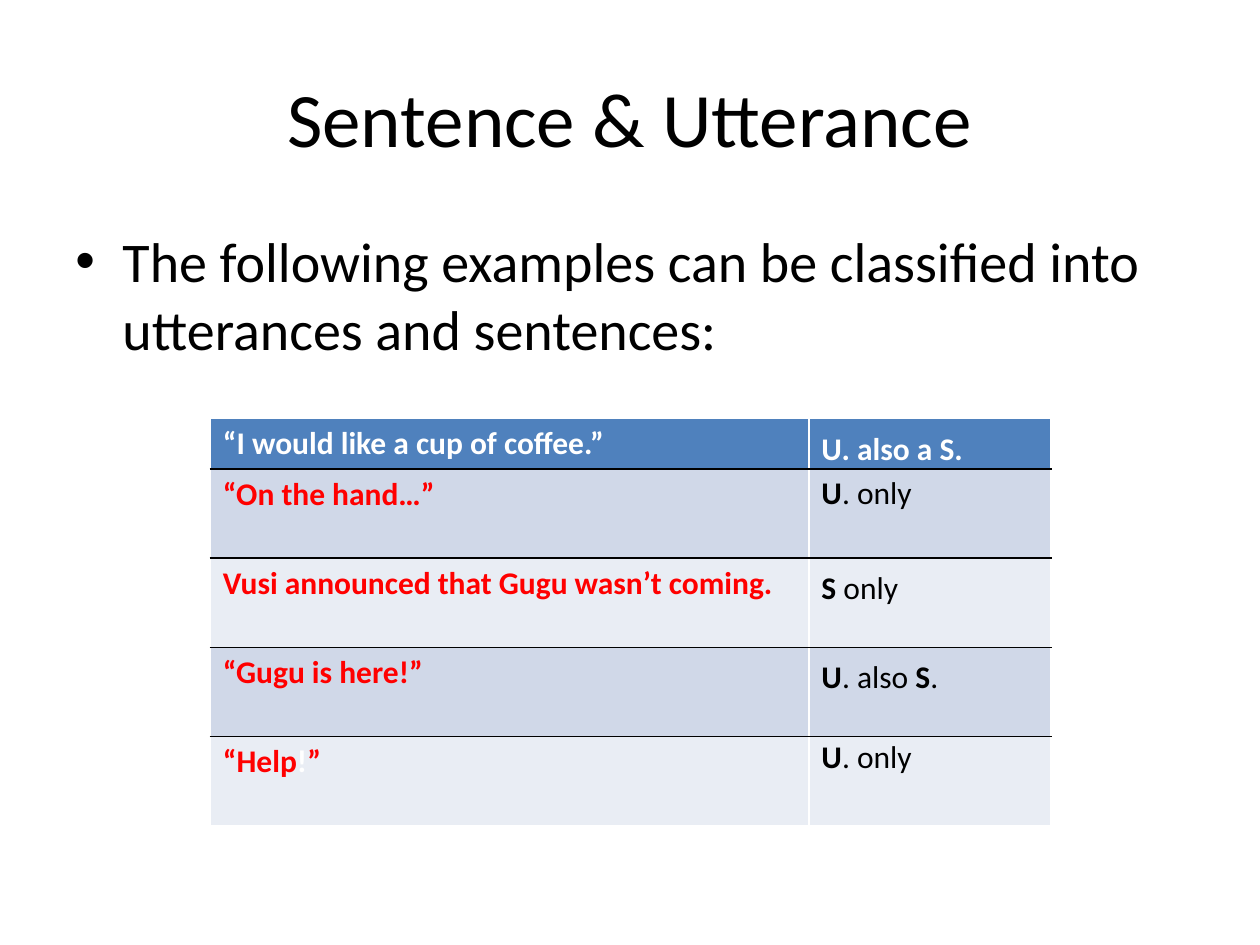
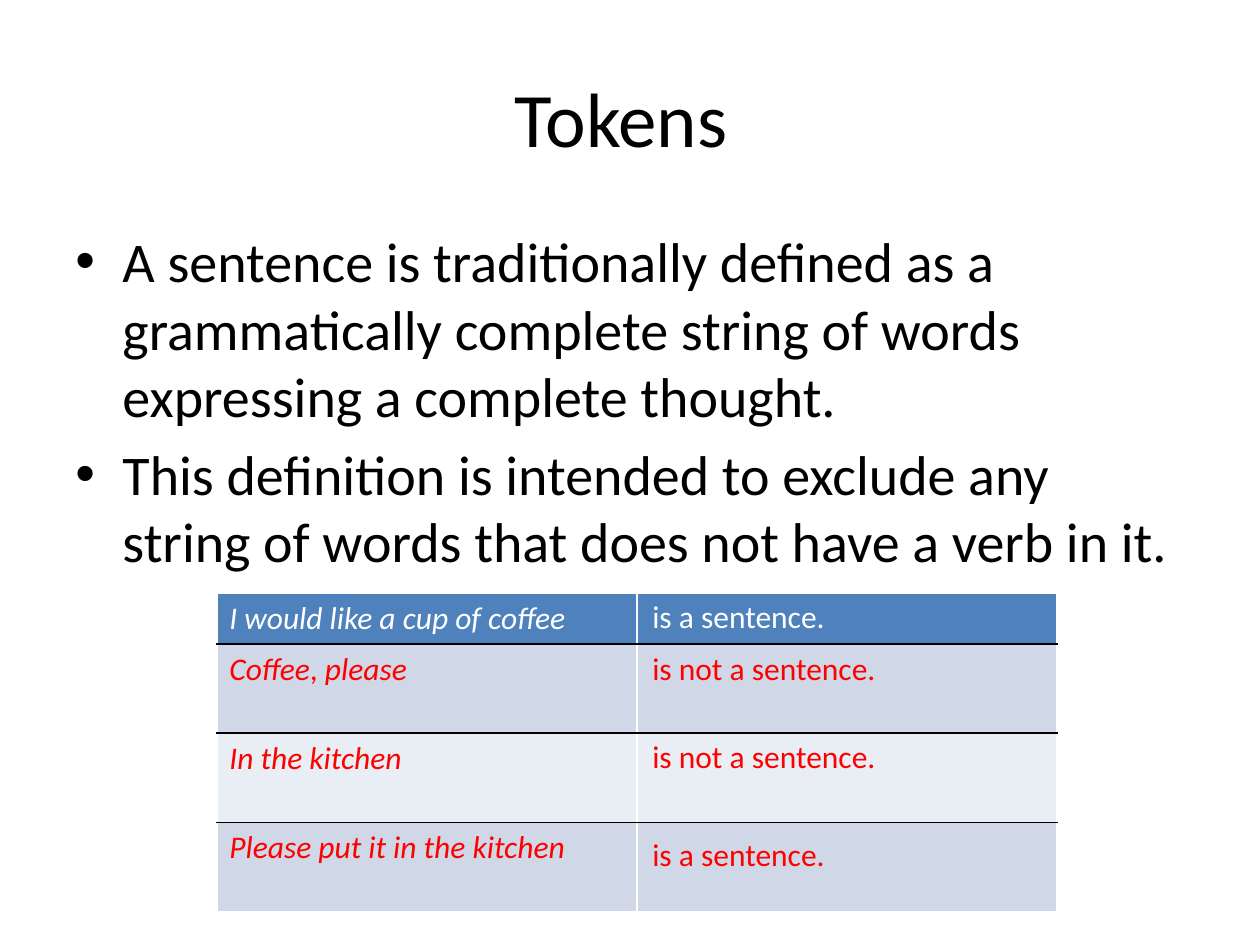
from lxml.etree import SubElement
from pptx import Presentation
from pptx.dml.color import RGBColor
from pptx.enum.text import MSO_ANCHOR as Anchor, MSO_AUTO_SIZE as AutoSize, PP_ALIGN as Align
from pptx.oxml.ns import qn
from pptx.util import Cm, Pt

FONT = "Calibri"
BLACK, WHITE, RED = "000000", "FFFFFF", "FF0000"
HEADER_FILL = "4F81BD"
BAND_FILLS = ("D0D8E8", "E9EDF4")
HEADER_HEIGHT, ROW_HEIGHT = 1.02, 1.8
ANSWER_HEIGHT = 1.02


def rgb(value):
    return RGBColor.from_string(value)


def write(para, text, size=18, color=BLACK, bold=False, italic=False):
    """Add text to a paragraph: a string, or a list of strings and (string, changes) pairs."""
    base = dict(size=size, color=color, bold=bold, italic=italic)
    for part in [text] if isinstance(text, str) else text:
        words, changes = (part, {}) if isinstance(part, str) else part
        look = base | changes
        span = para.add_run()
        span.text = words
        span.font.name = FONT
        span.font.size = Pt(look["size"])
        span.font.bold = look["bold"]
        span.font.italic = look["italic"]
        span.font.color.rgb = rgb(look["color"])


def add_frame(page, left, top, width, height):
    box = page.shapes.add_textbox(Cm(left), Cm(top), Cm(width), Cm(height))
    box.text_frame.word_wrap = True
    return box.text_frame


def add_title(page, text):
    frame = add_frame(page, 1.27, 0.76, 22.86, 3.18)
    frame.vertical_anchor = Anchor.MIDDLE
    para = frame.paragraphs[0]
    para.alignment = Align.CENTER
    write(para, text, size=44)


def add_bullets(page, points):
    frame = add_frame(page, 1.27, 4.45, 22.86, 12.57)
    for index, point in enumerate(points):
        para = frame.add_paragraph() if index else frame.paragraphs[0]
        para.space_before = Pt(6.4)
        props = para._p.get_or_add_pPr()
        props.set("marL", str(Cm(0.95)))
        props.set("indent", str(Cm(-0.95)))
        SubElement(props, qn("a:buFont"), typeface="Arial")
        SubElement(props, qn("a:buChar"), char="•")
        write(para, point, size=32)


def set_borders(cell, top, bottom):
    """Draw white sides and the given top and bottom lines, each 1 pt."""
    props = cell._tc.get_or_add_tcPr()
    for side, color in (("L", WHITE), ("R", WHITE), ("T", top), ("B", bottom)):
        line = SubElement(props, qn(f"a:ln{side}"), w=str(Pt(1)))
        fill = SubElement(line, qn("a:solidFill"))
        SubElement(fill, qn("a:srgbClr"), val=color)


def add_examples(page, left, top, widths, examples, **look):
    """Add a banded table with the examples in its first column."""
    count = len(examples)
    height = HEADER_HEIGHT + ROW_HEIGHT * (count - 1)
    table = page.shapes.add_table(
        count, len(widths), Cm(left), Cm(top), Cm(sum(widths)), Cm(height)).table
    table.horz_banding = False
    for column, width in zip(table.columns, widths):
        column.width = Cm(width)
    for index, (row, example) in enumerate(zip(table.rows, examples)):
        row.height = Cm(ROW_HEIGHT if index else HEADER_HEIGHT)
        for cell in row.cells:
            set_borders(cell, BLACK if index else WHITE,
                        BLACK if index < count - 1 else WHITE)
            cell.fill.solid()
            cell.fill.fore_color.rgb = rgb(BAND_FILLS[(index - 1) % 2] if index else HEADER_FILL)
        write(row.cells[0].text_frame.paragraphs[0], example,
              color=RED if index else WHITE, **look)


def add_answers(page, left, width, answers, color):
    """Place the (top, text) answers over the second column, the first in white."""
    for index, (top, text) in enumerate(answers):
        frame = add_frame(page, left, top, width, ANSWER_HEIGHT)
        frame.auto_size = AutoSize.SHAPE_TO_FIT_TEXT
        write(frame.paragraphs[0], text, color=color if index else WHITE)


def add_page(deck, title, points):
    page = deck.slides.add_slide(deck.slide_layouts[6])
    add_title(page, title)
    add_bullets(page, points)
    return page


def add_utterance_page(deck):
    page = add_page(deck, "Sentence & Utterance", [
        "The following examples can be classified into utterances and sentences:"])
    add_examples(page, 4.24, 8.43, (12.07, 4.88), [
        "“I would like a cup of coffee.”",
        "“On the hand…”",
        "Vusi announced that Gugu wasn’t coming.",
        "“Gugu is here!”",
        ["“Help", ("!", {"color": WHITE}), "”"],
    ], bold=True)
    strong = {"bold": True}
    utterance_only = [("U", strong), ". only"]
    add_answers(page, 16.31, 4.8, [
        (8.53, [("U. also a S.", strong)]),
        (9.42, utterance_only),
        (11.33, [("S ", strong), "only"]),
        (13.13, [("U", strong), ". also ", ("S", strong), "."]),
        (14.73, utterance_only),
    ], BLACK)


def add_token_page(deck):
    page = add_page(deck, "Tokens ", [
        "A sentence is traditionally defined as a grammatically complete string of words "
        "expressing a complete thought.",
        "This definition is intended to exclude any string of words that does not have "
        "a verb in it."])
    add_examples(page, 4.37, 11.96, (8.47, 8.47), [
        "I would like a cup of coffee",
        ["Coffee", (", ", {"italic": False}), "please"],
        "In the kitchen",
        "Please put it in the kitchen",
    ], italic=True)
    add_answers(page, 12.9, 8.2, [
        (11.91, "is a sentence."),
        (12.95, "is not a sentence."),
        (14.73, "is not a sentence."),
        (16.71, "is a sentence."),
    ], RED)


def main():
    deck = Presentation()
    deck.slide_width, deck.slide_height = Cm(25.4), Cm(19.05)
    add_utterance_page(deck)
    add_token_page(deck)
    deck.save("out.pptx")


if __name__ == "__main__":
    main()
